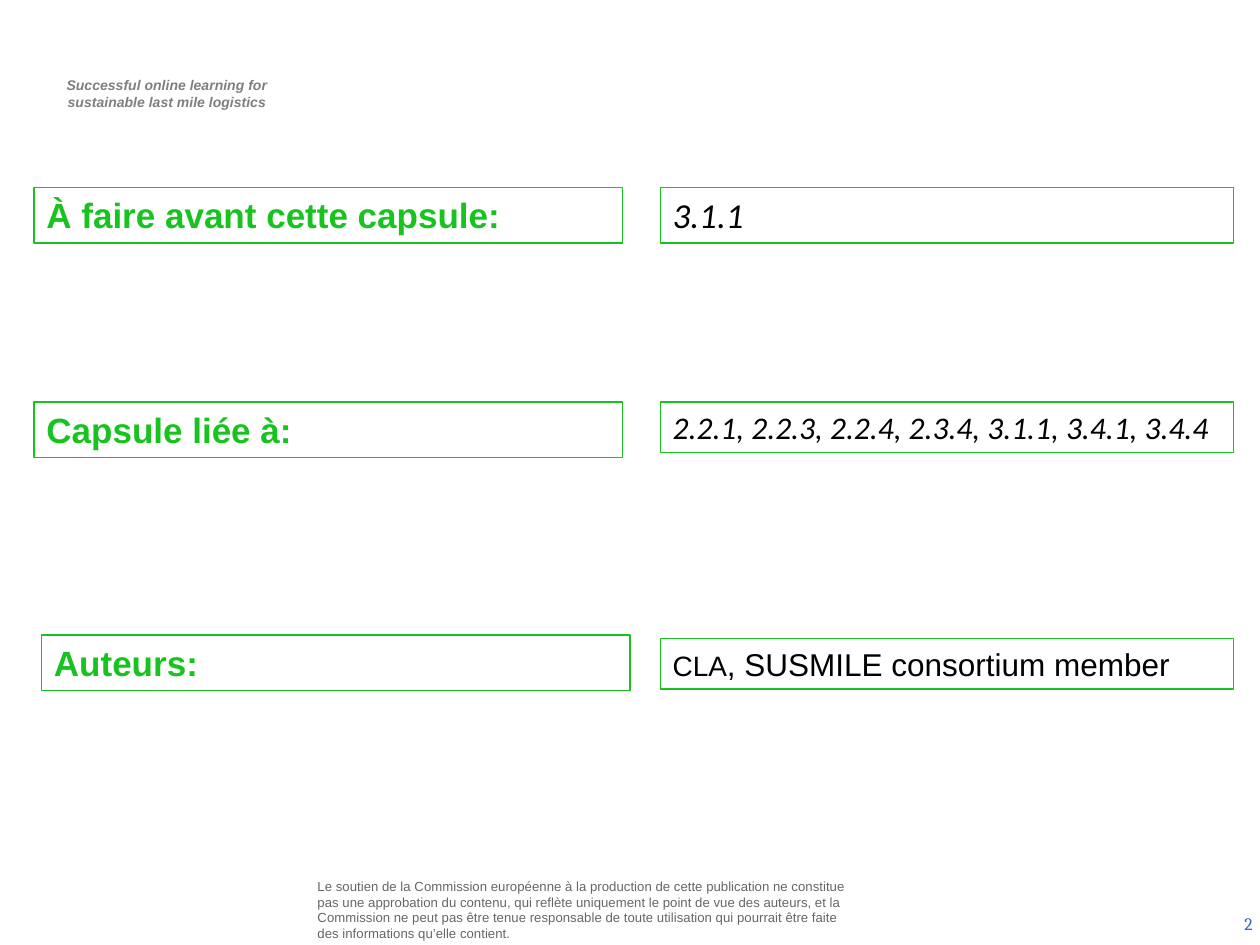
from pptx import Presentation
from pptx import util as u
from pptx.dml import color
from pptx.enum import shapes, text

THEME = {
    "green": "18C320", "white": "FFFFFF", "black": "000000",
    "header": "7F7F7F", "notice": "666666", "number": "3366CC",
    "label_size": 20, "value_size": 18, "initials_size": 16,
    "header_size": 8, "notice_size": 7.5, "number_size": 10,
}


def rgb(name):
    return color.RGBColor.from_string(THEME[name])


def write(shape, paragraphs, frame_format, align=text.PP_ALIGN.LEFT):
    frame = shape.text_frame
    margins = {"margin_left": 0.1, "margin_right": 0.1, "margin_top": 0.05, "margin_bottom": 0.05}
    for name, value in {"word_wrap": True, **frame_format}.items():
        if name in margins:
            margins[name] = value
        else:
            setattr(frame, name, value)
    for name, value in margins.items():
        setattr(frame, name, u.Inches(value))
    for index, runs in enumerate(paragraphs):
        paragraph = frame.paragraphs[0] if index == 0 else frame.add_paragraph()
        paragraph.alignment = align
        for words, size, fill, font_format in runs:
            run = paragraph.add_run()
            run.text = words
            run.font.size = u.Pt(THEME[size])
            run.font.color.rgb = rgb(fill)
            for name, value in font_format.items():
                setattr(run.font, name, value)


presentation = Presentation()
presentation.slide_width = u.Inches(10)
presentation.slide_height = u.Inches(7.5)
slide = presentation.slides.add_slide(presentation.slide_layouts[6])

arial = {"name": "Arial"}
bold = {"name": "Arial", "bold": True}
italic = {"name": "Calibri", "italic": True}
slogan = {"name": "Arial", "bold": True, "italic": True}
top = {"vertical_anchor": text.MSO_ANCHOR.TOP}
middle = {"vertical_anchor": text.MSO_ANCHOR.MIDDLE}

header_lines = ["Successful online learning for", "sustainable last mile logistics"]
notice = (
    "Le soutien de la Commission européenne à la production de cette publication ne constitue "
    "pas une approbation du contenu, qui reflète uniquement le point de vue des auteurs, et la "
    "Commission ne peut pas être tenue responsable de toute utilisation qui pourrait être faite "
    "des informations qu’elle contient."
)
text_boxes = [
    ((0.29, 0.56, 2.03, 0.37), [[(line, "header_size", "header", slogan)] for line in header_lines],
     {**top, "margin_left": 0.14}, text.PP_ALIGN.CENTER),
    ((2.48, 7.03, 4.27, 0.5), [[(notice, "notice_size", "notice", arial)]],
     {**middle, "margin_left": 0.04, "margin_right": 0.04, "margin_top": 0.04, "margin_bottom": 0.16},
     text.PP_ALIGN.LEFT),
    ((7.71, 7.13, 2.33, 0.4), [[("2", "number_size", "number", {"name": "Cambria"})]],
     middle, text.PP_ALIGN.RIGHT),
]
for position, paragraphs, frame_format, align in text_boxes:
    box = slide.shapes.add_textbox(*map(u.Inches, position))
    write(box, paragraphs, frame_format, align)

cards = [
    ((0.27, 1.49, 4.67, 0.44), [("À faire avant cette capsule:", "label_size", "green", bold)]),
    ((0.27, 3.19, 4.67, 0.44), [("Capsule liée à:", "label_size", "green", bold)]),
    ((5.24, 1.49, 4.55, 0.44), [("3.1.1", "label_size", "black", italic)]),
    ((5.24, 3.19, 4.55, 0.4),
     [("2.2.1, 2.2.3, 2.2.4, 2.3.4, 3.1.1, 3.4.1, 3.4.4", "value_size", "black", italic)]),
    ((0.33, 5.04, 4.67, 0.44), [("Auteurs:", "label_size", "green", bold)]),
    ((5.24, 5.07, 4.55, 0.4),
     [("CLA", "initials_size", "black", arial),
      (", SUSMILE consortium member", "value_size", "black", arial)]),
]
for position, runs in cards:
    card = slide.shapes.add_shape(shapes.MSO_SHAPE.RECTANGLE, *map(u.Inches, position))
    card.shadow.inherit = False
    card.fill.solid()
    card.fill.fore_color.rgb = rgb("white")
    card.line.color.rgb = rgb("green")
    card.line.width = u.Pt(0.75)
    write(card, [runs], {**top, "auto_size": text.MSO_AUTO_SIZE.SHAPE_TO_FIT_TEXT})

presentation.save("out.pptx")
